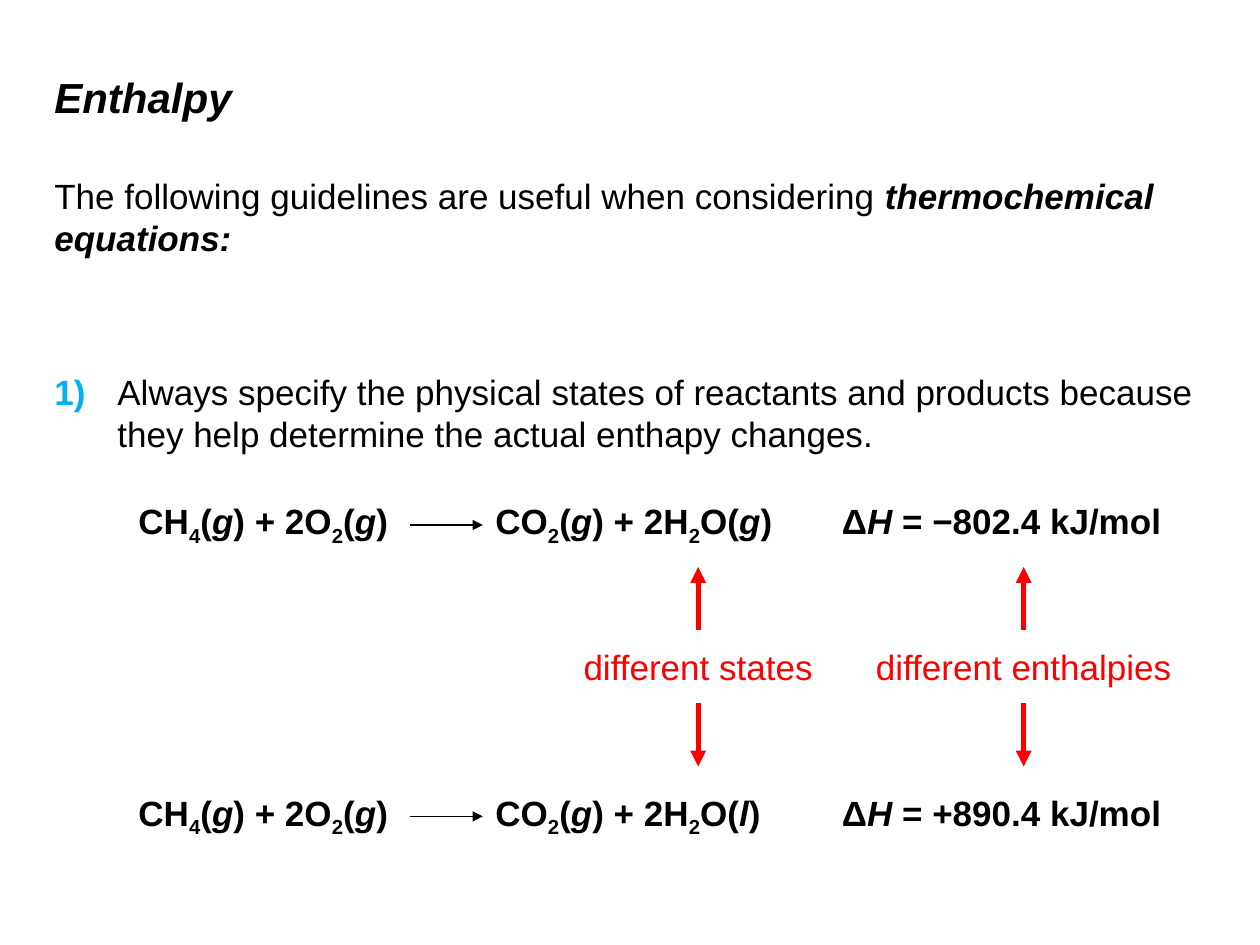
from dataclasses import dataclass

from lxml.etree import SubElement
from pptx import Presentation
from pptx.dml.color import RGBColor
from pptx.enum.shapes import MSO_CONNECTOR
from pptx.enum.text import MSO_ANCHOR, PP_ALIGN
from pptx.oxml.ns import qn
from pptx.util import Inches, Pt

BLACK = RGBColor(0x00, 0x00, 0x00)
RED = RGBColor(0xFF, 0x00, 0x00)
CYAN = RGBColor(0x00, 0xB0, 0xF0)
FONT = "Arial"

COLUMNS, ROWS = 120, 90
LEFT = 4
BODY_WIDTH = 113
LINE_HEIGHT = 5.25


@dataclass(frozen=True)
class Piece:
    text: str
    bold: bool = False
    italic: bool = False
    subscript: bool = False
    color: RGBColor = BLACK


@dataclass(frozen=True)
class Box:
    """A rectangle in grid columns and rows."""
    left: float
    top: float
    width: float
    height: float


@dataclass(frozen=True)
class Equation:
    row: float
    water_state: str
    enthalpy: str


@dataclass(frozen=True)
class Difference:
    left: float
    label: str


EQUATIONS = (
    Equation(47, "g", " = −802.4 kJ/mol"),
    Equation(74.75, "l", " = +890.4 kJ/mol"),
)
DIFFERENCES = (
    Difference(51, "different states"),
    Difference(82, "different enthalpies"),
)

prs = Presentation()
prs.slide_width, prs.slide_height = Inches(10), Inches(7.5)
slide = prs.slides.add_slide(prs.slide_layouts[6])


def x(column: float) -> int:
    return round(prs.slide_width * column / COLUMNS)


def y(row: float) -> int:
    return round(prs.slide_height * row / ROWS)


def add_text(box: Box, pieces: list[Piece], size: int = 20):
    """Add a one-paragraph text box and return its text frame."""
    frame = slide.shapes.add_textbox(x(box.left), y(box.top), x(box.width), y(box.height)).text_frame
    frame.word_wrap = True
    paragraph = frame.paragraphs[0]
    for piece in pieces:
        run = paragraph.add_run()
        run.text = piece.text
        font = run.font
        font.name, font.size = FONT, Pt(size)
        font.bold, font.italic = piece.bold, piece.italic
        font.color.rgb = piece.color
        if piece.subscript:
            run._r.get_or_add_rPr().set("baseline", "-25000")
    return frame


def add_arrow(start: tuple[float, float], end: tuple[float, float], color: RGBColor, width: float) -> None:
    arrow = slide.shapes.add_connector(MSO_CONNECTOR.STRAIGHT, x(start[0]), y(start[1]), x(end[0]), y(end[1]))
    arrow.line.color.rgb = color
    arrow.line.width = Pt(width)
    SubElement(arrow.line._get_or_add_ln(), qn("a:tailEnd"), type="triangle")
    SubElement(arrow._element.spPr, qn("a:effectLst"))


def formula(*parts: str) -> list[Piece]:
    """Bold pieces: digits alone are subscripts, single lowercase letters and H are italic."""
    return [Piece(part, bold=True, italic=part in ("g", "l", "H"), subscript=part.isdigit())
            for part in parts]


def add_equation(equation: Equation) -> None:
    row = equation.row
    add_text(Box(12, row, 28, LINE_HEIGHT), formula("CH", "4", "(", "g", ") + 2O", "2", "(", "g", ")"))
    add_text(Box(46, row, 31, LINE_HEIGHT),
             formula("CO", "2", "(", "g", ") + 2H", "2", "O(", equation.water_state, ")"))
    add_text(Box(79, row, 35, LINE_HEIGHT), formula("Δ", "H", equation.enthalpy))
    add_arrow((39, row + 3), (46, row + 3), BLACK, 0.75)


def add_difference(difference: Difference) -> None:
    """Add a red label with one arrow up and one arrow down."""
    width = 31
    frame = add_text(Box(difference.left, 60.85, width, LINE_HEIGHT), [Piece(difference.label, color=RED)])
    frame.paragraphs[0].alignment = PP_ALIGN.CENTER
    middle = difference.left + width / 2
    for start, end in ((60, 54), (67, 73)):
        add_arrow((middle, start), (middle, end), RED, 3)


title = add_text(Box(LEFT, 0.25, 102, 18.75), [Piece("Enthalpy", bold=True, italic=True)], size=24)
title.vertical_anchor = MSO_ANCHOR.MIDDLE
title.paragraphs[0].line_spacing = 0.81

add_text(Box(LEFT, 16, BODY_WIDTH, 9.25), [
    Piece("The following guidelines are useful when considering "),
    Piece("thermochemical equations:", bold=True, italic=True),
])

guideline = add_text(Box(LEFT, 34.7, BODY_WIDTH, 9.25), [
    Piece("1)", bold=True, color=CYAN),
    Piece("\tAlways specify the physical states of reactants and products because "
          "they help determine the actual enthapy changes."),
])
hanging = guideline.paragraphs[0]._p.get_or_add_pPr()
hanging.set("marL", str(Inches(0.5)))
hanging.set("indent", str(-Inches(0.5)))

for equation in EQUATIONS:
    add_equation(equation)
for difference in DIFFERENCES:
    add_difference(difference)

prs.save("out.pptx")
